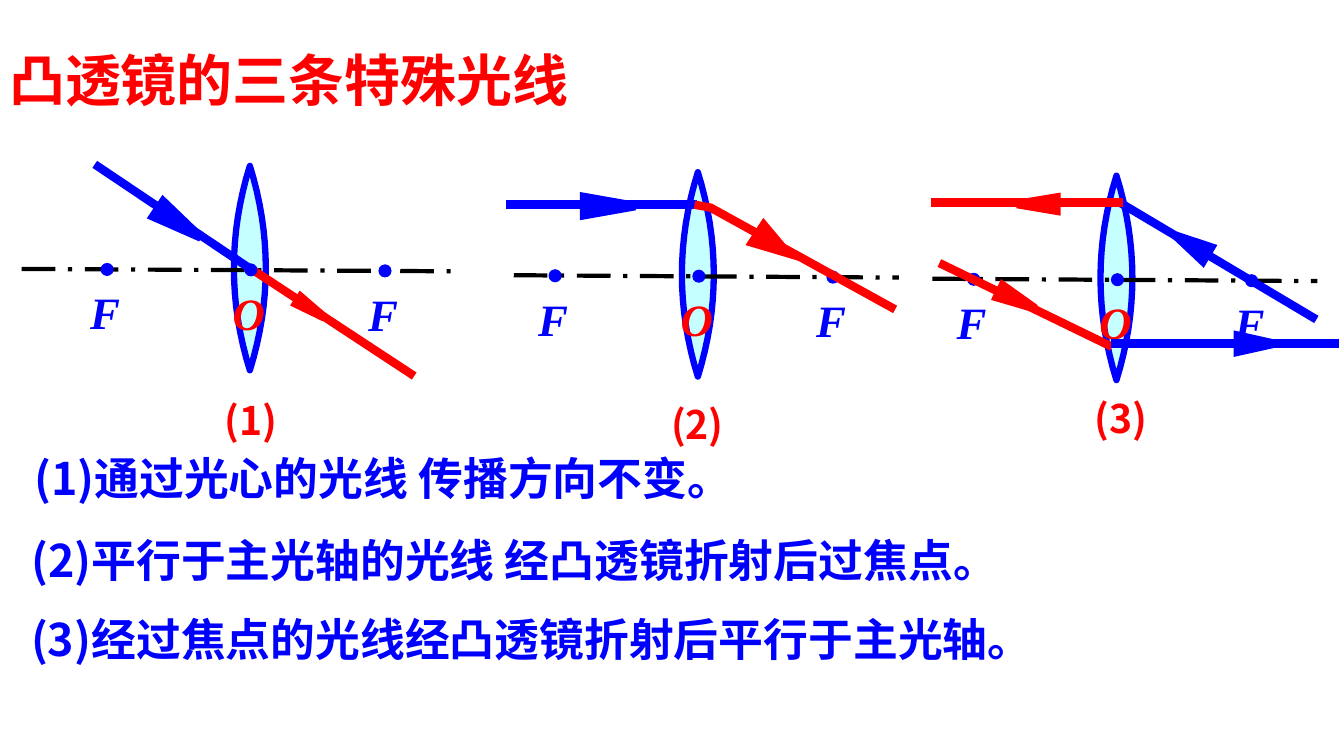
import math
from dataclasses import dataclass

from lxml import etree
from pptx import Presentation
from pptx.dml.color import RGBColor
from pptx.enum import dml, shapes, text
from pptx.oxml import ns
from pptx.util import Pt

RED = RGBColor(0xFF, 0x00, 0x00)
BLUE = RGBColor(0x00, 0x00, 0xFF)
BLACK = RGBColor(0x00, 0x00, 0x00)
GLASS = RGBColor(0xC5, 0xFF, 0xFF)

TITLE_FONT = "Noto Sans CJK JP"
BODY_FONT = "Noto Sans CJK SC"
LABEL_FONT = "Times New Roman"

LENS_HALF_WIDTH, LENS_HALF_HEIGHT = 11.4, 73
LENS_STEPS = 8  # from a tip to the middle
AXIS_RIGHT = 143.5
DOT = 8.6

Point = tuple[float, float]


@dataclass
class Ray:
    color: RGBColor
    points: list[Point]
    head: Point  # centre of the arrowhead
    head_width: float
    head_length: float
    turn: float = 0  # extra rotation of the arrowhead


@dataclass
class Diagram:
    center: Point
    axis_left: float
    caption: str
    caption_at: Point
    rays_below: list[Ray]  # under the marked points
    rays_above: list[Ray]


@dataclass
class Mark:
    name: str
    dx: float
    dy: float
    color: RGBColor


MARKS = [
    Mark("O", 0.7, 1.3, RED),
    Mark("F", 96.5, 2, BLUE),
    Mark("F", -102, 1, BLUE),
]

DIAGRAMS = [
    Diagram((178.5, 191.5), 163, "(1)", (153.4, 279.4), [
        Ray(BLUE, [(67.7, 117.4), (181.4, 193.7)], (128.2, 159.5), 13, 36.7),
        Ray(RED, [(178.6, 191.5), (295.9, 268.6)], (222.5, 220.7), 5.8, 22.3),
    ], []),
    Diagram((498.5, 196), 131.5, "(2)", (472.3, 282.2), [], [
        Ray(BLUE, [(361.4, 146.2), (498.2, 146.2)], (435.6, 147.2), 13, 36.7),
        Ray(RED, [(496.1, 146.2), (507.6, 148.3), (639.4, 221)],
            (551.9, 173.9), 15.1, 25.2, 4.4),
    ]),
    Diagram((797.5, 198.5), 131.5, "(3)", (774.7, 277.9), [], [
        Ray(BLUE, [(940.3, 228.2), (799.9, 144.7)], (851, 175), 11.5, 25.9),
        Ray(RED, [(802.1, 144.7), (665.3, 144.7)], (740.5, 145.8), 9.4, 28.1),
        Ray(RED, [(671, 187.9), (794.2, 247.7)], (726.8, 214.2), 9.4, 28.1),
        Ray(BLUE, [(793.4, 245.5), (956.2, 245.5)], (897.1, 245.5), 11.5, 25.9),
    ]),
]

RULES = [
    ("(1)通过光心的光线 传播方向不变。", 17.3, 318.2, 516),
    ("(2)平行于主光轴的光线 经凸透镜折射后过焦点。", 15.1, 376.6, 732),
    ("(3)经过焦点的光线经凸透镜折射后平行于主光轴。", 15.1, 433.4, 798),
]


def write(box, words: str, font: str, size: float, color: RGBColor,
          italic: bool = False, align=text.PP_ALIGN.LEFT) -> None:
    frame = box.text_frame
    frame.word_wrap = True
    frame.auto_size = text.MSO_AUTO_SIZE.NONE
    frame.vertical_anchor = text.MSO_ANCHOR.TOP
    para = frame.paragraphs[0]
    para.alignment = align
    span = para.add_run()
    span.text = words
    span.font.size = Pt(size)
    span.font.bold = True
    span.font.italic = italic
    span.font.color.rgb = color
    span.font.name = font
    east_asian = etree.SubElement(span.font._element, ns.qn("a:ea"))
    east_asian.set("typeface", font)


def add_words(page, left: float, top: float, width: float, height: float,
              *style, **options) -> None:
    box = page.shapes.add_textbox(Pt(left), Pt(top), Pt(width), Pt(height))
    write(box, *style, **options)


def add_line(page, start: Point, end: Point, color: RGBColor, width: float):
    line = page.shapes.add_connector(
        shapes.MSO_CONNECTOR.STRAIGHT, *map(Pt, start), *map(Pt, end))
    line.line.color.rgb = color
    line.line.width = Pt(width)
    etree.SubElement(line._element.spPr, ns.qn("a:effectLst"))
    return line


def style_shape(shape, fill: RGBColor | None, line: RGBColor, width: float) -> None:
    shape.shadow.inherit = False
    if fill is None:
        shape.fill.background()
    else:
        shape.fill.solid()
        shape.fill.fore_color.rgb = fill
    shape.line.color.rgb = line
    shape.line.width = Pt(width)


def add_preset(page, kind, center: Point, width: float, height: float,
               color: RGBColor, line_width: float):
    shape = page.shapes.add_shape(
        kind, Pt(center[0] - width / 2), Pt(center[1] - height / 2),
        Pt(width), Pt(height))
    style_shape(shape, color, color, line_width)
    return shape


def add_outline(page, points: list[Point], close: bool):
    corners = [(Pt(x), Pt(y)) for x, y in points]
    builder = page.shapes.build_freeform(*corners[0])
    builder.add_line_segments(corners[1:], close=close)
    return builder.convert_to_shape()


def add_lens(page, center: Point) -> None:
    cx, cy = center
    right = []
    for step in range(-LENS_STEPS, LENS_STEPS + 1):
        t = step / LENS_STEPS
        right.append((LENS_HALF_WIDTH * (1 - t * t), LENS_HALF_HEIGHT * t))
    left = [(-dx, dy) for dx, dy in reversed(right[1:-1])]
    lens = add_outline(page, [(cx + dx, cy + dy) for dx, dy in right + left], True)
    style_shape(lens, GLASS, BLUE, 4.5)


def add_ray(page, ray: Ray) -> None:
    if len(ray.points) == 2:
        add_line(page, *ray.points, ray.color, 6)
    else:
        style_shape(add_outline(page, ray.points, False), None, ray.color, 6)
    (x1, y1), (x2, y2) = ray.points[-2:]
    head = add_preset(page, shapes.MSO_SHAPE.ISOSCELES_TRIANGLE, ray.head,
                      ray.head_width, ray.head_length, ray.color, 6)
    head.rotation = math.degrees(math.atan2(x2 - x1, y1 - y2)) % 360 + ray.turn
    # Sharp corners make the arrowhead pointed
    corner = etree.SubElement(head.line._get_or_add_ln(), ns.qn("a:miter"))
    corner.set("lim", "800000")


def add_diagram(page, diagram: Diagram) -> None:
    cx, cy = diagram.center
    add_lens(page, diagram.center)
    axis = add_line(page, (cx - diagram.axis_left, cy + 0.6),
                    (cx + AXIS_RIGHT, cy + 2.3), BLACK, 3)
    axis.line.dash_style = dml.MSO_LINE.LONG_DASH_DOT
    for ray in diagram.rays_below:
        add_ray(page, ray)
    for mark in MARKS:
        x, y = cx + mark.dx, cy + mark.dy
        add_preset(page, shapes.MSO_SHAPE.OVAL, (x, y), DOT, DOT, BLUE, 0.75)
        add_words(page, x - 25.5, y + 7.5, 48.2, 41, mark.name, LABEL_FONT, 32,
                  mark.color, italic=True, align=text.PP_ALIGN.CENTER)
    for ray in diagram.rays_above:
        add_ray(page, ray)
    add_words(page, *diagram.caption_at, 57.6, 41, diagram.caption,
              BODY_FONT, 28, RED)


def main() -> None:
    deck = Presentation()
    deck.slide_width, deck.slide_height = Pt(960), Pt(540)
    page = deck.slides.add_slide(deck.slide_layouts[5])

    # Title
    title = page.shapes.title
    title.left, title.top, title.width, title.height = map(Pt, (-0.7, 28.8, 424, 55.4))
    write(title, "凸透镜的三条特殊光线", TITLE_FONT, 40, RED)

    # Lens diagrams
    for diagram in DIAGRAMS:
        add_diagram(page, diagram)

    # Rules of the three rays
    for words, left, top, width in RULES:
        add_words(page, left, top, width, 46, words, BODY_FONT, 32, BLUE)

    deck.save("out.pptx")


if __name__ == "__main__":
    main()
